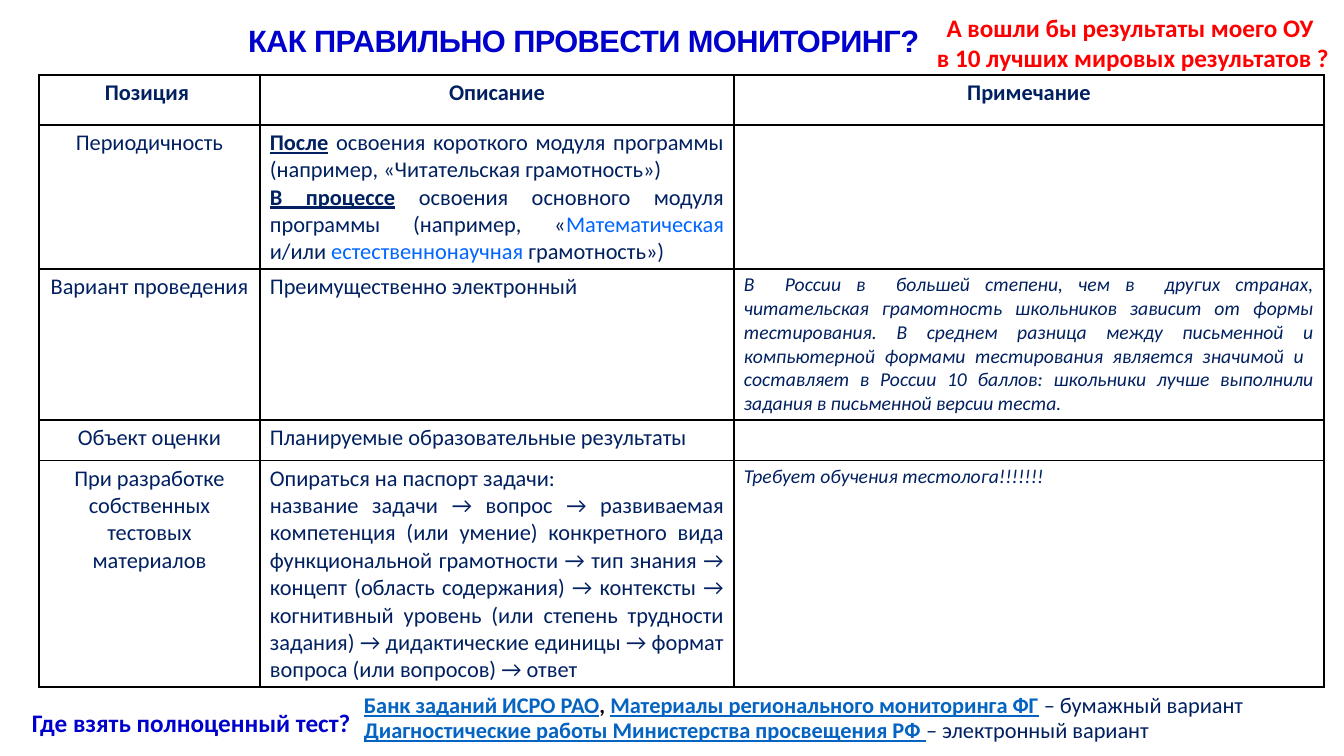
from lxml.etree import SubElement
from pptx import Presentation
from pptx.dml.color import RGBColor
from pptx.enum.text import MSO_ANCHOR as Anchor, MSO_AUTO_SIZE as AutoSize, PP_ALIGN as Align
from pptx.oxml.ns import qn
from pptx.util import Emu, Pt

BLUE = RGBColor(0x00, 0x00, 0xCC)
NAVY = RGBColor(0x00, 0x20, 0x60)
BRIGHT = RGBColor(0x00, 0x66, 0xFF)
LINK = RGBColor(0x05, 0x63, 0xC1)
RED = RGBColor(0xFF, 0x00, 0x00)
BLACK = RGBColor(0x00, 0x00, 0x00)
WHITE = RGBColor(0xFF, 0xFF, 0xFF)

# Style: size, colour, bold, underline, italic
PLAIN = (16, NAVY, False, False, False)
HEAD = (16, NAVY, True, False, False)
STRESSED = (16, NAVY, True, True, False)
SUBJECT = (16, BRIGHT, False, False, False)
NOTE = (14, NAVY, False, False, True)
LINKED = (16, LINK, True, True, False)
COMMA = (16, BLACK, True, False, False)
TITLE = (22, BLUE, True, False, False)
QUESTION = (18, BLUE, True, False, False)
CHALLENGE = (18, RED, True, False, False)

TITLE_TEXT = "КАК ПРАВИЛЬНО ПРОВЕСТИ МОНИТОРИНГ?"
TITLE_BOX = (238, 17, 768, 47)

# Each cell or box holds paragraphs; each paragraph is a list of (text, style) runs
HEADINGS = ["Позиция ", "Описание", "Примечание"]
ROWS = [
    ("Периодичность", [
        [("После", STRESSED),
         (" освоения короткого модуля программы (например, «Читательская грамотность»)", PLAIN)],
        [("В процессе", STRESSED),
         (" освоения основного модуля программы (например, «", PLAIN),
         ("Математическая", SUBJECT), (" и/или ", PLAIN),
         ("естественнонаучная", SUBJECT), (" грамотность»)", PLAIN)],
    ], []),
    ("Вариант проведения", [[("Преимущественно электронный", PLAIN)]], [
        [("В  России в  большей степени, чем в  других странах, читательская грамотность "
          "школьников зависит от формы тестирования. В среднем разница между письменной и "
          "компьютерной формами тестирования является значимой и  составляет в России "
          "10 баллов: школьники лучше выполнили задания в письменной версии теста. ", NOTE)],
    ]),
    ("Объект оценки", [[("Планируемые образовательные результаты", PLAIN)]], []),
    ("При разработке собственных тестовых материалов", [
        [("Опираться на паспорт задачи: ", PLAIN)],
        [("название задачи → вопрос → развиваемая компетенция (или умение) конкретного вида "
          "функциональной грамотности → тип знания → концепт (область содержания) → контексты → "
          "когнитивный уровень (или степень трудности задания) → дидактические единицы → "
          "формат вопроса (или вопросов) → ответ", PLAIN)],
    ], [[("Требует обучения тестолога!!!!!!!", NOTE)]]),
]
TABLE_LEFT, TABLE_TOP = 39, 75
COLUMN_WIDTHS = [221, 474, 590]
ROW_HEIGHTS = [50, 144, 151, 41, 226]

# Box, wrapping, alignment, paragraphs
TEXT_BOXES = [
    ((22, 702, 348, 40), False, Align.LEFT, [[("Где взять полноценный тест?", QUESTION)]]),
    ((354, 686, 921, 37), True, Align.LEFT, [
        [("Банк заданий ИСРО РАО", LINKED), (", ", COMMA),
         ("Материалы регионального мониторинга ФГ", LINKED),
         (" – бумажный вариант", PLAIN)]]),
    ((354, 711, 838, 37), True, Align.LEFT, [
        [("Диагностические работы Министерства просвещения РФ ", LINKED),
         ("– электронный вариант", PLAIN)]]),
    ((914, 7, 438, 72), True, Align.CENTER, [
        [("А вошли бы результаты моего ОУ ", CHALLENGE)],
        [("в 10 лучших мировых результатов ?", CHALLENGE)]]),
]


def px(length):
    return Emu(round(length * 914400 / 100.8))


def write(text_frame, paragraphs, alignment, font_name="Calibri"):
    for index, runs in enumerate(paragraphs):
        paragraph = text_frame.paragraphs[0] if index == 0 else text_frame.add_paragraph()
        paragraph.alignment = alignment
        for text, (size, colour, bold, underline, italic) in runs:
            run = paragraph.add_run()
            run.text = text
            font = run.font
            font.name, font.size = font_name, Pt(size)
            font.bold, font.underline, font.italic = bold, underline, italic
            font.color.rgb = colour


def add_borders(cell):
    """Draw a one-point black line on all four sides; must precede the fill."""
    properties = cell._tc.get_or_add_tcPr()
    for side in ("lnL", "lnR", "lnT", "lnB"):
        line = SubElement(properties, qn(f"a:{side}"), w=str(Pt(1)))
        fill = SubElement(line, qn("a:solidFill"))
        SubElement(fill, qn("a:srgbClr"), val=str(BLACK))


def add_title(slide):
    title = slide.shapes.title
    title.left, title.top, title.width, title.height = map(px, TITLE_BOX)
    frame = title.text_frame
    frame.vertical_anchor = Anchor.TOP
    frame.word_wrap = True
    frame.auto_size = AutoSize.NONE
    write(frame, [[(TITLE_TEXT, TITLE)]], Align.LEFT, "Arial")
    frame.paragraphs[0].runs[0].font._element.set("spc", "-40")


def add_monitoring_table(slide):
    shape = slide.shapes.add_table(
        len(ROW_HEIGHTS), len(COLUMN_WIDTHS), px(TABLE_LEFT), px(TABLE_TOP),
        px(sum(COLUMN_WIDTHS)), px(sum(ROW_HEIGHTS)))
    table = shape.table
    table.first_row = table.horz_banding = False
    for column, width in zip(table.columns, COLUMN_WIDTHS):
        column.width = px(width)
    for row, height in zip(table.rows, ROW_HEIGHTS):
        row.height = px(height)

    contents = [[[[(heading, HEAD)]] for heading in HEADINGS]]
    contents += [[[[(position, PLAIN)]], description, remark]
                 for position, description, remark in ROWS]
    for row_index, row in enumerate(contents):
        for column_index, paragraphs in enumerate(row):
            cell = table.cell(row_index, column_index)
            cell.margin_left = cell.margin_right = px(10)
            cell.margin_top, cell.margin_bottom = px(4), px(3)
            add_borders(cell)
            cell.fill.solid()
            cell.fill.fore_color.rgb = WHITE
            centred = row_index == 0 or column_index == 0
            write(cell.text_frame, paragraphs, Align.CENTER if centred else Align.JUSTIFY)


def add_text_box(slide, box, wrap, alignment, paragraphs):
    frame = slide.shapes.add_textbox(*map(px, box)).text_frame
    frame.word_wrap = wrap
    frame.auto_size = AutoSize.SHAPE_TO_FIT_TEXT
    write(frame, paragraphs, alignment)


def main():
    presentation = Presentation()
    presentation.slide_width, presentation.slide_height = px(1344), px(756)
    slide = presentation.slides.add_slide(presentation.slide_layouts[5])
    add_title(slide)
    add_monitoring_table(slide)
    for text_box in TEXT_BOXES:
        add_text_box(slide, *text_box)
    presentation.save("out.pptx")


if __name__ == "__main__":
    main()
